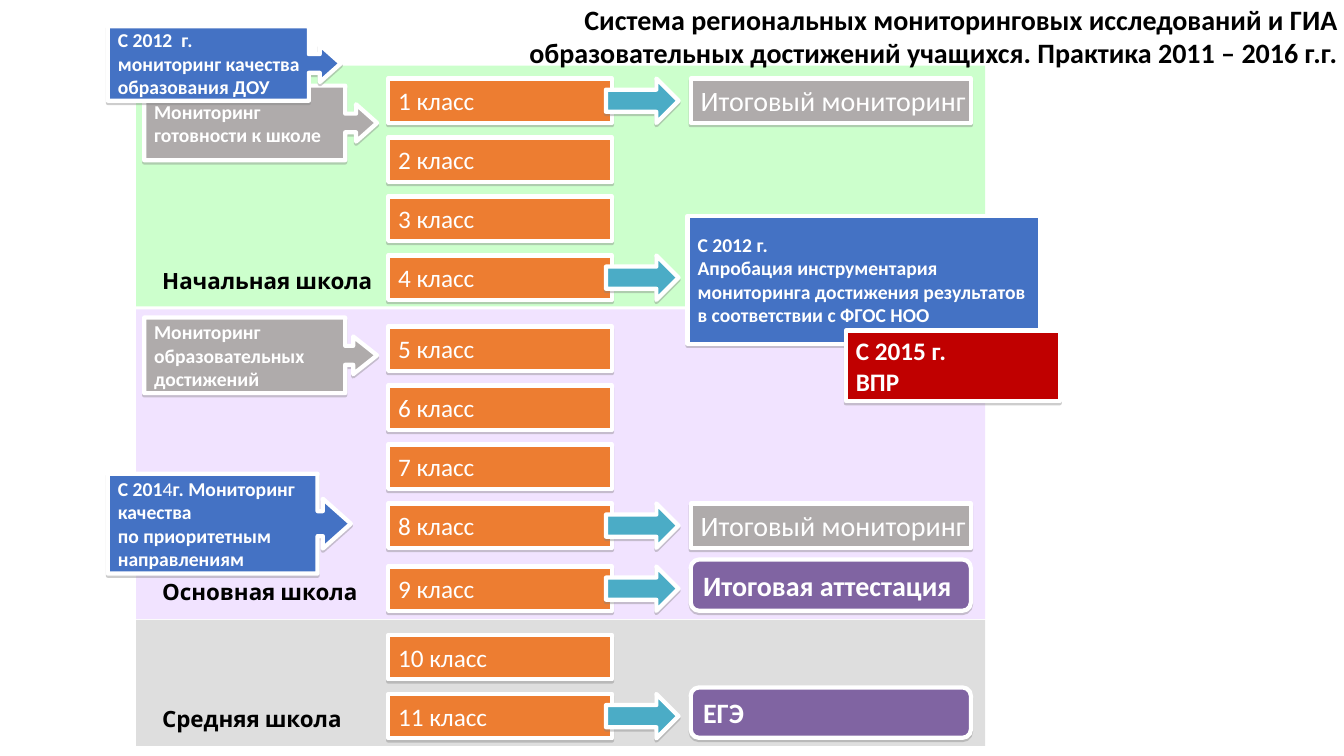
from dataclasses import dataclass

import pptx
import pptx.dml.color
import pptx.enum.shapes
import pptx.enum.text
import pptx.oxml
import pptx.oxml.ns
import pptx.util
from pptx.util import Inches

COLORS = {
    "white": "FFFFFF", "black": "000000", "shadow": "808080",
    "primary": "CCFFCC", "basic": "CC99FF", "senior": "C0C0C0",
    "grade": "ED7D31", "monitoring": "AFABAB", "exam": "8064A2",
    "arrow": "4BACC6", "regional": "4472C4", "national": "C00000",
}
GEOMETRY = pptx.enum.shapes.MSO_SHAPE
ANCHOR = pptx.enum.text.MSO_ANCHOR
ALIGN = pptx.enum.text.PP_ALIGN
GRADE_PITCH = 0.585
GRADE_HEIGHT = 0.44


@dataclass(frozen=True)
class Run:
    text: str
    bold: bool = True


@dataclass(frozen=True)
class Box:
    left: float
    top: float
    width: float
    height: float


@dataclass(frozen=True)
class Stage:
    name: str
    color: str
    alpha: int
    area: Box
    label_area: Box


@dataclass(frozen=True)
class Card:
    area: Box
    color: str
    lines: tuple[tuple[Run, ...], ...] = ()
    size: int = 14
    geometry: int = GEOMETRY.RECTANGLE
    adjustments: tuple[float, ...] = ()


def rgb(color: str) -> pptx.dml.color.RGBColor:
    return pptx.dml.color.RGBColor.from_string(COLORS[color])


def bold_lines(*texts: str) -> tuple[tuple[Run, ...], ...]:
    return tuple((Run(text),) for text in texts)


def emu(area: Box) -> tuple[int, ...]:
    return tuple(Inches(n) for n in (area.left, area.top, area.width, area.height))


def write(frame, lines, size: int, font: str, color: str, align=ALIGN.LEFT) -> None:
    for number, line in enumerate(lines):
        paragraph = frame.add_paragraph() if number else frame.paragraphs[0]
        paragraph.alignment = align
        for part in line:
            run = paragraph.add_run()
            run.text = part.text
            run.font.name = font
            run.font.size = pptx.util.Pt(size)
            run.font.bold = part.bold
            run.font.color.rgb = rgb(color)


def grow(frame) -> None:
    frame.word_wrap = True
    frame.auto_size = pptx.enum.text.MSO_AUTO_SIZE.SHAPE_TO_FIT_TEXT


def draw_band(slide, stage: Stage) -> None:
    band = slide.shapes.add_shape(GEOMETRY.RECTANGLE, *emu(stage.area))
    band.shadow.inherit = False
    band.line.fill.background()
    band.fill.solid()
    band.fill.fore_color.rgb = rgb(stage.color)
    if stage.alpha < 100:
        tint = band.element.spPr.find(".//" + pptx.oxml.ns.qn("a:srgbClr"))
        tint.append(pptx.oxml.parse_xml(
            f'<a:alpha {pptx.oxml.ns.nsdecls("a")} val="{stage.alpha * 1000}"/>'))


def draw_label(slide, stage: Stage) -> None:
    label = slide.shapes.add_textbox(*emu(stage.label_area))
    grow(label.text_frame)
    write(label.text_frame, bold_lines(stage.name), 16, "Cabin", "black")


def draw_card(slide, card: Card) -> None:
    shape = slide.shapes.add_shape(card.geometry, *emu(card.area))
    for index, value in enumerate(card.adjustments):
        shape.adjustments[index] = value
    shape.fill.solid()
    shape.fill.fore_color.rgb = rgb(card.color)
    shape.line.color.rgb = rgb("white")
    shape.line.width = pptx.util.Pt(3)
    shape.shadow.inherit = False
    effects = shape.element.spPr.find(pptx.oxml.ns.qn("a:effectLst"))
    effects.append(pptx.oxml.parse_xml(
        f'<a:outerShdw {pptx.oxml.ns.nsdecls("a")} blurRad="0" dist="20320" '
        f'dir="5400000" rotWithShape="0"><a:srgbClr val="{COLORS["shadow"]}">'
        '<a:alpha val="38000"/></a:srgbClr></a:outerShdw>'))
    if card.lines:
        shape.text_frame.word_wrap = False
        shape.text_frame.vertical_anchor = ANCHOR.MIDDLE
        write(shape.text_frame, card.lines, card.size, "Calibri", "white")


def callout(area: Box, color: str, lines, head: float = 0.281) -> Card:
    return Card(area, color, lines, geometry=GEOMETRY.RIGHT_ARROW_CALLOUT,
                adjustments=(0.25, 0.25, head, 0.863))


def final_monitoring(top: float) -> Card:
    return Card(Box(6.85, top, 2.78, GRADE_HEIGHT), "monitoring",
                ((Run("Итоговый мониторинг", False),),), 20)


def exam(name: str, top: float, height: float) -> Card:
    return Card(Box(6.85, top, 2.78, height), "exam", bold_lines(name), 20,
                GEOMETRY.ROUNDED_RECTANGLE, (0.167,))


def add_title(slide) -> None:
    title = slide.shapes.title
    title.left, title.top, title.width, title.height = emu(Box(4.21, -0.02, 9.13, 0.74))
    frame = title.text_frame
    grow(frame)
    frame.vertical_anchor = ANCHOR.TOP
    frame.margin_left = frame.margin_right = Inches(0.07)
    frame.margin_top = frame.margin_bottom = Inches(0.04)
    write(frame, bold_lines(
        "Система региональных мониторинговых исследований и ГИА "
        "образовательных достижений учащихся. Практика 2011 – 2016 г.г."),
        20, "Calibri", "black", ALIGN.RIGHT)
    slide.shapes.element.append(title.element)


STAGES = (
    Stage("Средняя школа", "senior", 51, Box(1.35, 6.15, 8.42, 1.25), Box(1.51, 6.95, 2.3, 0.37)),
    Stage("Основная школа", "basic", 27, Box(1.35, 3.07, 8.42, 3.07), Box(1.51, 5.69, 2.3, 0.37)),
    Stage("Начальная школа", "primary", 100, Box(1.35, 0.65, 8.42, 2.39), Box(1.51, 2.6, 2.38, 0.37)),
)
GRADE_GROUPS = ((0.78, range(1, 5)), (3.24, range(5, 9)), (5.62, range(9, 10)), (6.3, range(10, 12)))
GRADE_TOPS = {grade: start + row * GRADE_PITCH
              for start, grades in GRADE_GROUPS for row, grade in enumerate(grades)}
ASSESSED_GRADES = (1, 4, 8, 9, 11)

GRADES = [Card(Box(3.85, top, 2.22, GRADE_HEIGHT), "grade", ((Run(f"{grade} класс", False),),), 18)
          for grade, top in GRADE_TOPS.items()]
ARROWS = [Card(Box(6.01, GRADE_TOPS[grade], 0.72, GRADE_HEIGHT), "arrow",
               geometry=GEOMETRY.RIGHT_ARROW, adjustments=(0.5, 0.5))
          for grade in ASSESSED_GRADES]
ASSESSMENTS = [
    callout(Box(1.43, 0.85, 2.31, 0.74), "monitoring",
            bold_lines("Мониторинг", "готовности к школе")),
    callout(Box(1.43, 3.15, 2.31, 0.75), "monitoring",
            bold_lines("Мониторинг", "образовательных", "достижений"), 0.316),
    final_monitoring(GRADE_TOPS[1]),
    final_monitoring(GRADE_TOPS[8]),
    exam("Итоговая аттестация", 5.55, 0.51),
    exam("ЕГЭ", 6.82, 0.5),
]
NEW_PROGRAMMES = [
    callout(Box(1.07, 0.26, 2.31, 0.74), "regional",
            bold_lines("С 2012  г.", "мониторинг качества", "образования ДОУ")),
    Card(Box(6.82, 2.14, 3.5, 1.27), "regional",
         bold_lines("С 2012 г.", "Апробация инструментария",
                    "мониторинга достижения результатов", "в соответствии с ФГОС НОО")),
    callout(Box(1.07, 4.7, 2.41, 0.99), "regional",
            ((Run("С 201"), Run("4", False), Run("г. Мониторинг")),
             *bold_lines("качества", "по приоритетным", "направлениям"))),
    Card(Box(8.39, 3.28, 2.12, 0.7), "national", bold_lines("С 2015 г.", "ВПР"), 18),
]


def main() -> None:
    presentation = pptx.Presentation()
    presentation.slide_width = Inches(13.33)
    presentation.slide_height = Inches(7.5)
    slide = presentation.slides.add_slide(presentation.slide_layouts[5])
    for stage in STAGES:
        draw_band(slide, stage)
    add_title(slide)
    for card in GRADES + ASSESSMENTS:
        draw_card(slide, card)
    for stage in STAGES:
        draw_label(slide, stage)
    for card in ARROWS + NEW_PROGRAMMES:
        draw_card(slide, card)
    presentation.save("out.pptx")


if __name__ == "__main__":
    main()
